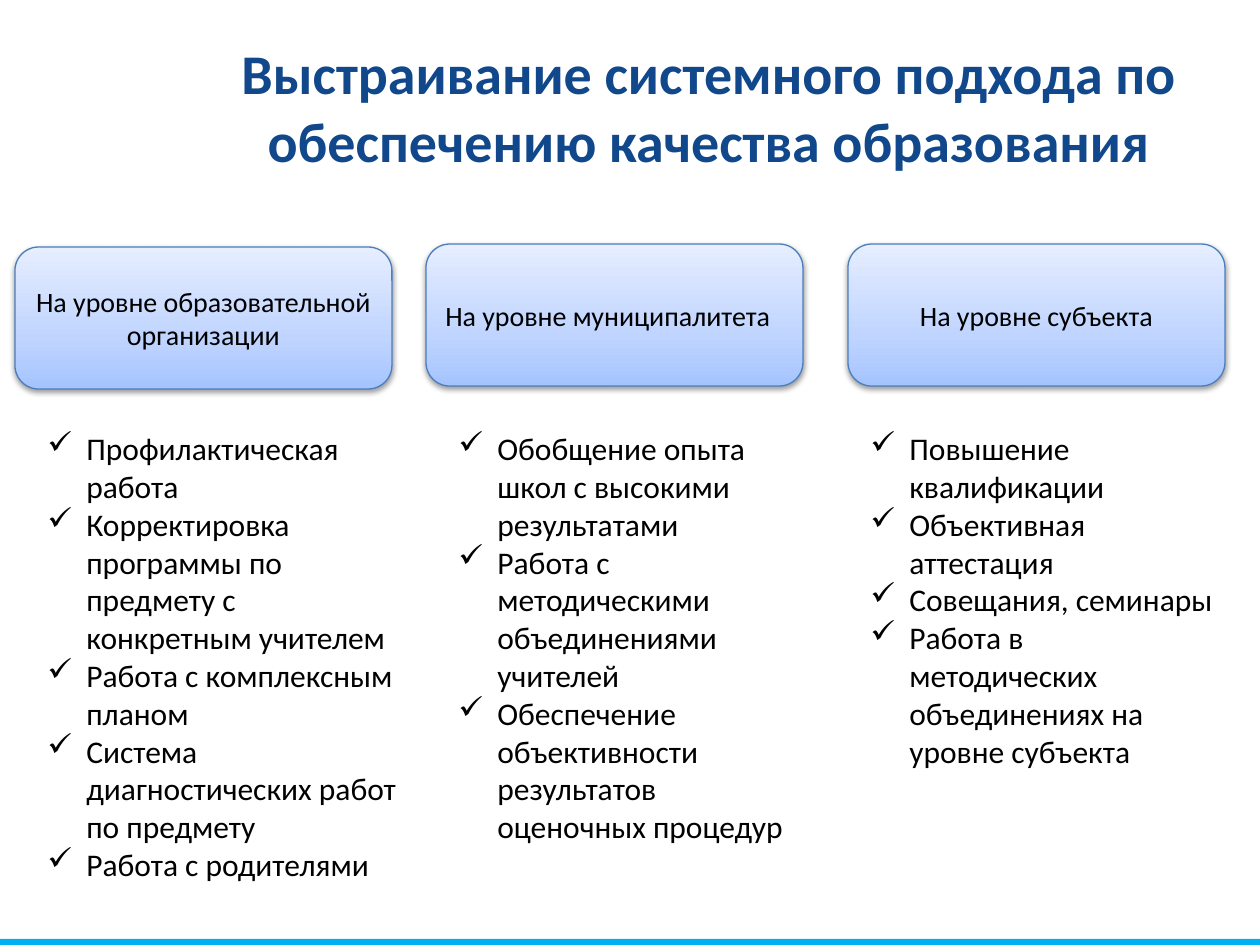
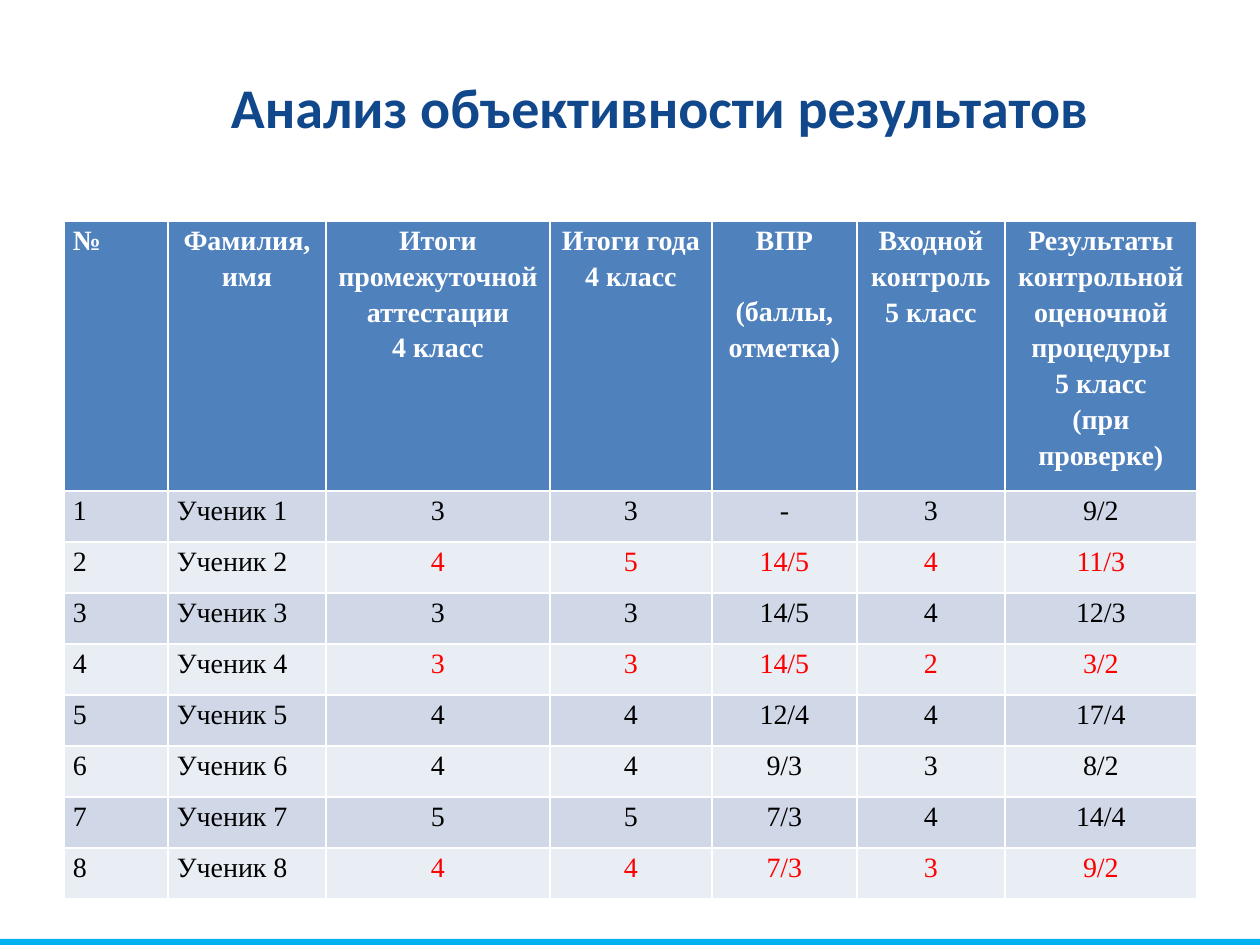
from lxml import etree
from pptx import Presentation
from pptx import util as u
from pptx.dml.color import RGBColor
from pptx.enum import shapes, text
from pptx.oxml import ns

PX = 914400 / 126
NAVY = RGBColor(0x11, 0x47, 0x8B)
CYAN = RGBColor(0x00, 0xB0, 0xF0)
OUTLINE = RGBColor(0x4B, 0x7E, 0xBC)
GRADIENT = [(0, "A4C4FF"), (35, "BFD4FF"), (100, "E6EEFF")]
HEADER_BLUE = RGBColor(0x4F, 0x81, 0xBD)
BAND_DARK = RGBColor(0xD0, 0xD8, 0xE8)
BAND_LIGHT = RGBColor(0xE9, 0xED, 0xF4)
BLACK = RGBColor(0x00, 0x00, 0x00)
WHITE = RGBColor(0xFF, 0xFF, 0xFF)
RED = RGBColor(0xFF, 0x00, 0x00)
CENTER, LEFT = text.PP_ALIGN.CENTER, text.PP_ALIGN.LEFT
MIDDLE, TOP = text.MSO_ANCHOR.MIDDLE, text.MSO_ANCHOR.TOP


def place(left, top, width, height):
    return [u.Emu(round(length * PX)) for length in (left, top, width, height)]


def write_text(frame, lines, *, size=16, color=BLACK, bold=False, font="Calibri",
               align=LEFT, anchor=TOP, spacing=None, bullet=None, gaps=None):
    """Fill a frame with one paragraph per line; gaps maps a line number to its space before."""
    frame.word_wrap = True
    frame.vertical_anchor = anchor
    for number, line in enumerate(lines):
        paragraph = frame.paragraphs[0] if number == 0 else frame.add_paragraph()
        if bullet:
            properties = paragraph._p.get_or_add_pPr()
            indent = round(39 * PX)
            properties.set("marL", str(indent))
            properties.set("indent", str(-indent))
            etree.SubElement(properties, ns.qn("a:buChar"), char=bullet)
        paragraph.alignment = align
        if spacing:
            paragraph.line_spacing = spacing
        if gaps and number in gaps:
            paragraph.space_before = u.Pt(gaps[number])
        run = paragraph.add_run()
        run.text = line
        run.font.name = font
        run.font.size = u.Pt(size)
        run.font.bold = bold
        run.font.color.rgb = color


presentation = Presentation()
presentation.slide_width, presentation.slide_height = place(0, 0, 1260, 945)[2:]

# Both slides: bottom band and title
titles = [
    ("Выстраивание системного подхода по обеспечению качества образования", (203, 40, 1012, 132)),
    ("Анализ объективности результатов", (164, 66, 992, 81)),
]
for title, area in titles:
    slide = presentation.slides.add_slide(presentation.slide_layouts[6])
    band = slide.shapes.add_shape(shapes.MSO_SHAPE.RECTANGLE, *place(0, 939, 1260, 6))
    band.shadow.inherit = False
    band.fill.solid()
    band.fill.fore_color.rgb = CYAN
    band.line.fill.background()
    title_box = slide.shapes.add_textbox(*place(*area))
    write_text(title_box.text_frame, [title], size=32, color=NAVY, bold=True,
               align=CENTER, anchor=MIDDLE)
levels_slide, results_slide = presentation.slides

# Three levels, each a heading box over a check list
levels = [
    ("На уровне образовательной организации", CENTER, (15, 247), (35, 377), [
        "Профилактическая работа",
        "Корректировка программы по предмету с конкретным учителем",
        "Работа с комплексным планом",
        "Система диагностических работ по предмету",
        "Работа с родителями",
    ]),
    ("На уровне муниципалитета", LEFT, (426, 244), (446, 357), [
        "Обобщение опыта школ с высокими результатами",
        "Работа с методическими объединениями учителей",
        "Обеспечение объективности результатов оценочных процедур",
    ]),
    ("На уровне субъекта", CENTER, (848, 244), (858, 372), [
        "Повышение квалификации",
        "Объективная аттестация",
        "Совещания, семинары",
        "Работа в методических объединениях на уровне субъекта",
    ]),
]
for heading, align, (box_left, box_top), (list_left, list_width), tasks in levels:
    box = levels_slide.shapes.add_shape(shapes.MSO_SHAPE.ROUNDED_RECTANGLE,
                                        *place(box_left, box_top, 377, 142))
    box.fill.gradient()
    box.fill.gradient_angle = 90
    stops = box._element.spPr.find(".//" + ns.qn("a:gsLst"))
    for stop in list(stops):
        stops.remove(stop)
    for position, color in GRADIENT:
        stop = etree.SubElement(stops, ns.qn("a:gs"), pos=str(position * 1000))
        etree.SubElement(stop, ns.qn("a:srgbClr"), val=color)
    box.line.color.rgb = OUTLINE
    box.line.width = u.Pt(0.75)
    box.shadow.inherit = False
    effects = box._element.spPr.find(ns.qn("a:effectLst"))
    shadow = etree.SubElement(effects, ns.qn("a:outerShdw"), blurRad="40000", dist="20000",
                              dir="5400000", rotWithShape="0")
    shade = etree.SubElement(shadow, ns.qn("a:srgbClr"), val="000000")
    etree.SubElement(shade, ns.qn("a:alpha"), val="38000")
    write_text(box.text_frame, [heading], align=align, anchor=MIDDLE)

    task_box = levels_slide.shapes.add_textbox(*place(list_left, 423, list_width, 500))
    write_text(task_box.text_frame, tasks, size=18, bullet="✓")

# Table of results
headers = [
    ["№"],
    ["Фамилия, имя"],
    ["Итоги промежуточной аттестации", "4 класс"],
    ["Итоги года", "4 класс"],
    ["ВПР", "(баллы, отметка)"],
    ["Входной контроль", "5 класс"],
    ["Результаты контрольной оценочной процедуры", "5 класс", "(при проверке)"],
]
marks = [
    ["3", "3", "-", "3", "9/2"],
    ["4", "5", "14/5", "4", "11/3"],
    ["3", "3", "14/5", "4", "12/3"],
    ["3", "3", "14/5", "2", "3/2"],
    ["4", "4", "12/4", "4", "17/4"],
    ["4", "4", "9/3", "3", "8/2"],
    ["5", "5", "7/3", "4", "14/4"],
    ["4", "4", "7/3", "3", "9/2"],
]
red_pupils = {2, 4, 8}
column_widths = [104, 158, 224, 162, 145, 148, 192]
row_heights = [269] + [51] * len(marks)
rows = [headers] + [[[str(pupil)], [f"Ученик {pupil}"]] + [[mark] for mark in pupil_marks]
                    for pupil, pupil_marks in enumerate(marks, 1)]

table = results_slide.shapes.add_table(
    len(rows), len(headers), *place(64, 221, sum(column_widths), sum(row_heights))).table
for column, width in zip(table.columns, column_widths):
    column.width = u.Emu(round(width * PX))
for row, height in zip(table.rows, row_heights):
    row.height = u.Emu(round(height * PX))
for row_number, row in enumerate(rows):
    is_header = row_number == 0
    for column_number, lines in enumerate(row):
        cell = table.cell(row_number, column_number)
        cell.margin_left = cell.margin_right = u.Emu(round(9 * PX))
        cell.margin_top = cell.margin_bottom = 0
        cell.fill.solid()
        if is_header:
            cell.fill.fore_color.rgb, color = HEADER_BLUE, WHITE
        else:
            cell.fill.fore_color.rgb = BAND_DARK if row_number % 2 else BAND_LIGHT
            color = RED if row_number in red_pupils and column_number > 1 else BLACK
        centered = column_number > 1 or (is_header and column_number == 1)
        write_text(cell.text_frame, lines, font="Times New Roman", color=color, bold=is_header,
                   align=CENTER if centered else LEFT, spacing=1.15,
                   gaps={1: 20} if lines[0] == "ВПР" else None)

presentation.save("out.pptx")
